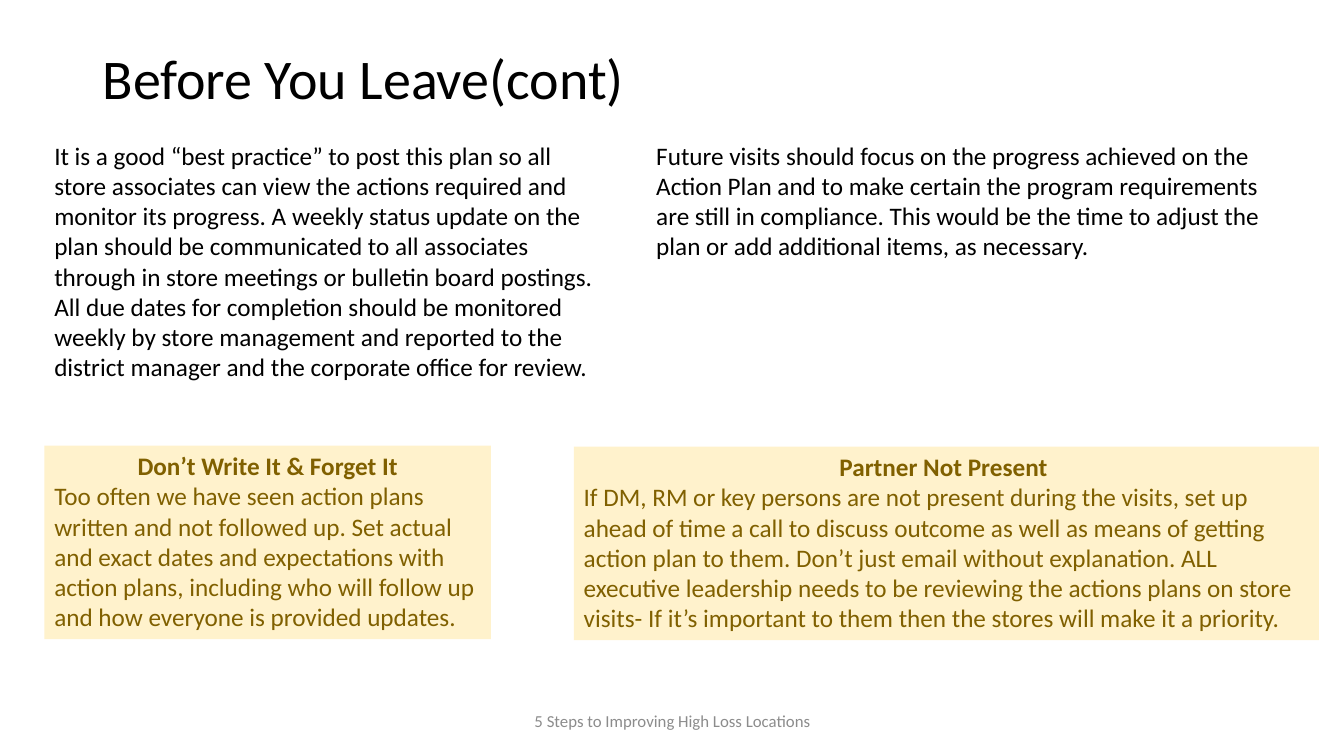
from pptx import Presentation
from pptx.dml.color import RGBColor
from pptx.enum.shapes import MSO_SHAPE as Shape
from pptx.enum.text import MSO_ANCHOR as Anchor, MSO_AUTO_SIZE as Fit, PP_ALIGN as Align
from pptx.util import Inches, Pt

BLACK = RGBColor(0x00, 0x00, 0x00)
GREY = RGBColor(0x8C, 0x8C, 0x8C)
CREAM = RGBColor(0xFF, 0xF2, 0xCC)
BROWN = RGBColor(0x80, 0x60, 0x00)

deck = Presentation()
deck.slide_width, deck.slide_height = Inches(13.33), Inches(7.5)
slide = deck.slides.add_slide(deck.slide_layouts[6])
COL, ROW = deck.slide_width / 100, deck.slide_height / 100
EDGE, TOP = 3.3, 17.87


def place(x, y, wide, high):
    return [round(n) for n in (x * COL, y * ROW, wide * COL, high * ROW)]


def write(shape, lines, size, color, anchor, fit):
    frame = shape.text_frame
    look = {"word_wrap": True, "vertical_anchor": anchor, "auto_size": fit}
    for key, value in look.items():
        setattr(frame, key, value)
    for i, (text, align, bold) in enumerate(lines):
        para = frame.add_paragraph() if i else frame.paragraphs[0]
        para.alignment = align
        run = para.add_run()
        run.text = text
        for key, value in {"name": "Calibri", "size": Pt(size), "bold": bold}.items():
            setattr(run.font, key, value)
        run.font.color.rgb = color
    return frame


title = slide.shapes.add_textbox(*place(6.9, 5.33, 41.2, 10.8))
frame = write(title, [("Before You Leave(cont)", Align.LEFT, False)], 40, BLACK, Anchor.MIDDLE, Fit.NONE)
frame.paragraphs[0].line_spacing = 0.9

foot = slide.shapes.add_textbox(*place(33.16, 92.67, 33.76, 5.33))
write(foot, [("5 Steps to Improving High Loss Locations", Align.CENTER, False)], 12, GREY, Anchor.MIDDLE, Fit.NONE)

notes = [
    (EDGE, 42.16, 37.73,
     "It is a good “best practice” to post this plan so all store associates can view the actions "
     "required and monitor its progress. A weekly status update on the plan should be communicated "
     "to all associates through in store meetings or bulletin board postings. All due dates for "
     "completion should be monitored weekly by store management and reported to the district "
     "manager and the corporate office for review."),
    (48.09, 46.59, 21.6,
     "Future visits should focus on the progress achieved on the Action Plan and to make certain "
     "the program requirements are still in compliance. This would be the time to adjust the plan "
     "or add additional items, as necessary."),
]
for x, wide, high, text in notes:
    note = slide.shapes.add_textbox(*place(x, TOP, wide, high))
    write(note, [(text, Align.LEFT, False)], 18, BLACK, Anchor.TOP, Fit.SHAPE_TO_FIT_TEXT)

tips = [
    (EDGE, 58.93, 33.23, "Don’t Write It & Forget It",
     "Too often we have seen action plans written and not followed up. Set actual and exact dates "
     "and expectations with action plans, including who will follow up and how everyone is "
     "provided updates."),
    (42.69, 59.07, 55.44, "Partner Not Present ",
     "If DM, RM or key persons are not present during the visits, set up ahead of time a call to "
     "discuss outcome as well as means of getting action plan to them. Don’t just email without "
     "explanation. ALL executive leadership needs to be reviewing the actions plans on store "
     "visits- If it’s important to them then the stores will make it a priority."),
]
for x, y, wide, head, text in tips:
    tip = slide.shapes.add_shape(Shape.RECTANGLE, *place(x, y, wide, 25.6))
    tip.shadow.inherit = False
    tip.fill.solid()
    tip.fill.fore_color.rgb = CREAM
    tip.line.fill.background()
    lines = [(head, Align.CENTER, True), (text, Align.LEFT, False)]
    write(tip, lines, 18, BROWN, Anchor.TOP, Fit.SHAPE_TO_FIT_TEXT)

deck.save("out.pptx")
